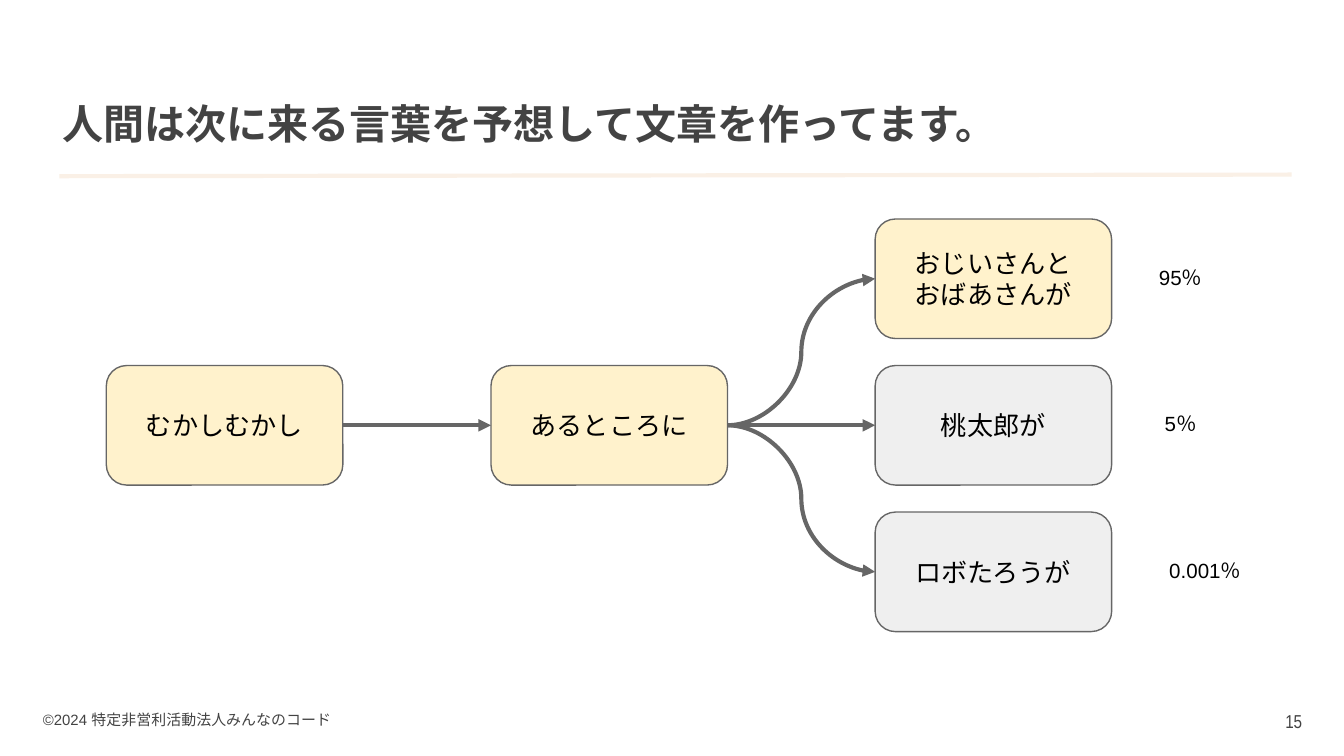
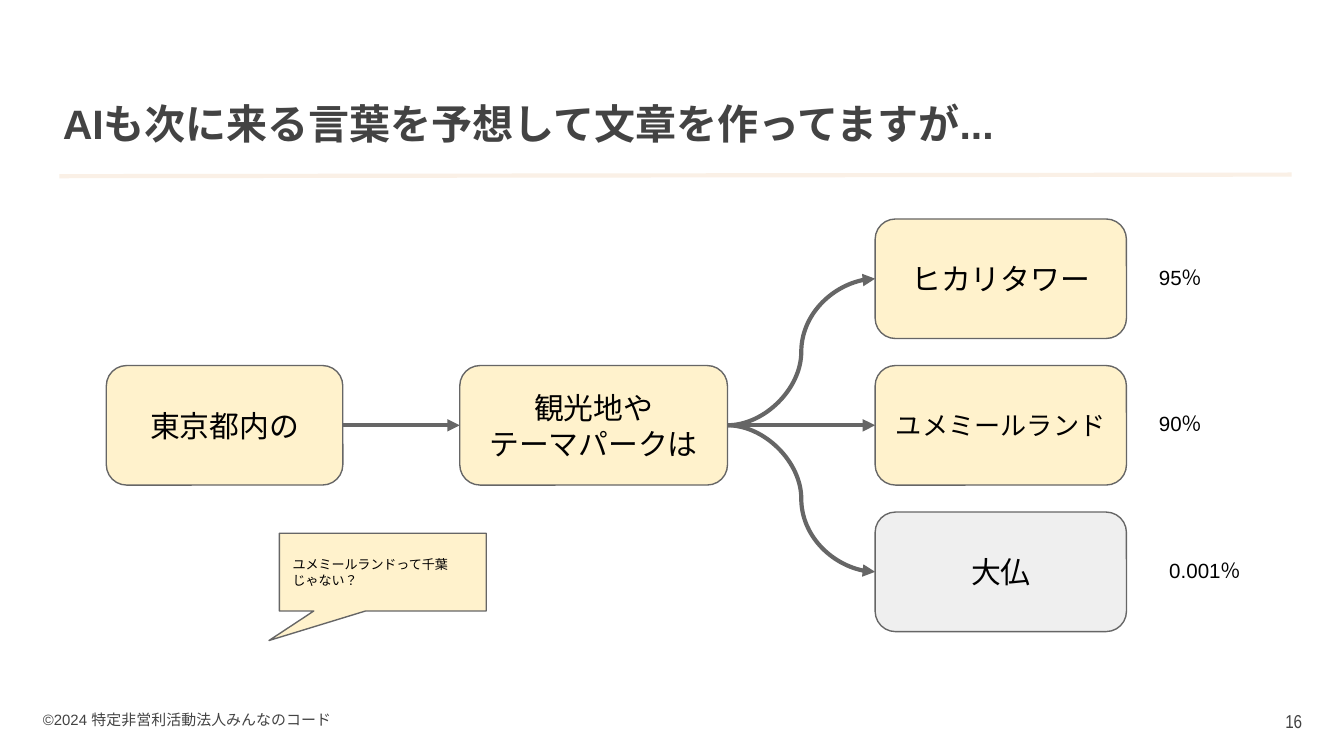
from dataclasses import dataclass

from lxml import etree
from pptx import Presentation
from pptx.dml.color import RGBColor
from pptx.enum.lang import MSO_LANGUAGE_ID
from pptx.enum.shapes import MSO_CONNECTOR, MSO_SHAPE
from pptx.enum.text import MSO_ANCHOR, MSO_AUTO_SIZE, PP_ALIGN
from pptx.oxml.ns import qn
from pptx.util import Cm, Pt

STRAIGHT, CURVE = MSO_CONNECTOR.STRAIGHT, MSO_CONNECTOR.CURVE
ROUNDED, CALLOUT = MSO_SHAPE.ROUNDED_RECTANGLE, MSO_SHAPE.ROUNDED_RECTANGULAR_CALLOUT
LEFT, CENTER, RIGHT = PP_ALIGN.LEFT, PP_ALIGN.CENTER, PP_ALIGN.RIGHT
TOP, MIDDLE = MSO_ANCHOR.TOP, MSO_ANCHOR.MIDDLE
JAPANESE = MSO_LANGUAGE_ID.JAPANESE
LEFT_SIDE, RIGHT_SIDE = 1, 3


@dataclass(frozen=True)
class Theme:
    font: str = "Arial"
    number_font: str = "Arial Narrow"
    dark: str = "434343"
    black: str = "000000"
    outline: str = "666666"
    rule: str = "FAF0E6"
    likely: str = "FFF2CC"
    unlikely: str = "EFEFEF"
    title_size: int = 22
    large_size: int = 16
    word_size: int = 14
    percent_size: int = 11
    number_size: int = 10
    footer_size: int = 8
    callout_size: int = 7
    thin: float = 0.75
    thick: float = 2.25


THEME = Theme()
FOOTER = "©2024 特定非営利活動法人みんなのコード"

# Flow diagram grid, in centimetres
BOX_WIDTH, BOX_HEIGHT = 4.47, 2.26
FIRST_LEFT, SECOND_RIGHT, BRANCH_LEFT = 2.01, 13.75, 16.54
BRANCH_TOP, ROW_PITCH = 4.14, 2.77
MIDDLE_TOP = BRANCH_TOP + ROW_PITCH
PERCENT_HEIGHT = 1.0
PERCENT_COLUMNS = [(21.56, 1.51), (21.56, 1.51), (21.77, 2.02)]


class Deck:
    def __init__(self, theme):
        self.theme = theme
        self.presentation = Presentation()
        self.presentation.slide_width = Cm(25.4)
        self.presentation.slide_height = Cm(14.29)
        self.slide = None

    def add_slide(self, title, number):
        """Start a slide with the shared title, rule and footer."""
        theme = self.theme
        self.slide = self.presentation.slides.add_slide(self.presentation.slide_layouts[6])
        self.text(number, 23.37, 13.08, 1.52, 1.09, theme.number_size, theme.dark,
                  RIGHT, MIDDLE, inset=0.28, font=theme.number_font)
        self.text(FOOTER, 0.58, 13.26, 6.15, 0.58, theme.footer_size, theme.dark,
                  inset=0.23)
        rule = self.slide.shapes.add_connector(
            STRAIGHT, Cm(1.12), Cm(3.33), Cm(24.41), Cm(3.3))
        self.style_line(rule, theme.rule)
        self.text(title, 0.91, 1.37, 23.62, 1.93, theme.title_size, theme.dark,
                  anchor=MIDDLE, inset=0.28, bold=True)

    def fill_text(self, shape, text, size, color, align, anchor, inset, font, bold):
        frame = shape.text_frame
        frame.word_wrap = True
        frame.vertical_anchor = anchor
        frame.margin_left = frame.margin_right = Cm(inset)
        frame.margin_top = frame.margin_bottom = Cm(inset)
        for index, line in enumerate(text.split("\n")):
            paragraph = frame.add_paragraph() if index else frame.paragraphs[0]
            paragraph.alignment = align
            run = paragraph.add_run()
            run.text = line
            run.font.size = Pt(size)
            run.font.bold = bold
            run.font.color.rgb = RGBColor.from_string(color)
            run.font.name = font
            run.font.language_id = JAPANESE
            etree.SubElement(run._r.get_or_add_rPr(), qn("a:ea"), typeface=font)

    def text(self, text, left, top, width, height, size, color, align=LEFT,
             anchor=TOP, inset=0.25, font=None, bold=False):
        box = self.slide.shapes.add_textbox(Cm(left), Cm(top), Cm(width), Cm(height))
        self.fill_text(box, text, size, color, align, anchor, inset,
                       font or self.theme.font, bold)
        return box

    def shape(self, kind, text, left, top, width, height, fill, size,
              adjustments, align=CENTER):
        shape = self.slide.shapes.add_shape(
            kind, Cm(left), Cm(top), Cm(width), Cm(height))
        for index, value in enumerate(adjustments):
            shape.adjustments[index] = value
        shape.shadow.inherit = False
        shape.fill.solid()
        shape.fill.fore_color.rgb = RGBColor.from_string(fill)
        shape.line.color.rgb = RGBColor.from_string(self.theme.outline)
        shape.line.width = Pt(self.theme.thin)
        self.fill_text(shape, text, size, self.theme.black, align, MIDDLE, 0.25,
                       self.theme.font, False)
        return shape

    def word(self, text, left, top, width, size, fill):
        return self.shape(ROUNDED, text, left, top, width, BOX_HEIGHT, fill, size, [0.17])

    def percent(self, text, row):
        left, width = PERCENT_COLUMNS[row]
        top = BRANCH_TOP + row * ROW_PITCH + (BOX_HEIGHT - PERCENT_HEIGHT) / 2
        box = self.text(text, left, top, width, PERCENT_HEIGHT,
                        self.theme.percent_size, self.theme.black, CENTER)
        box.text_frame.auto_size = MSO_AUTO_SIZE.SHAPE_TO_FIT_TEXT

    def style_line(self, connector, color):
        connector.line.color.rgb = RGBColor.from_string(color)
        connector.line.width = Pt(self.theme.thick)
        etree.SubElement(connector._element.spPr, qn("a:effectLst"))

    def arrow(self, kind, source, target):
        """Join the right side of one box to the left side of another."""
        connector = self.slide.shapes.add_connector(
            kind, source.left + source.width, source.top + source.height // 2,
            target.left, target.top + target.height // 2)
        connector.begin_connect(source, RIGHT_SIDE)
        connector.end_connect(target, LEFT_SIDE)
        self.style_line(connector, self.theme.outline)
        etree.SubElement(connector.line._get_or_add_ln(), qn("a:tailEnd"), type="triangle")

    def flow(self, first, second, branches, size, second_width, branch_width):
        """Two words in a row, then three possible next words with their odds."""
        likely = self.theme.likely
        start = self.word(first, FIRST_LEFT, MIDDLE_TOP, BOX_WIDTH, size, likely)
        middle = self.word(second, SECOND_RIGHT - second_width, MIDDLE_TOP,
                           second_width, size, likely)
        self.arrow(STRAIGHT, start, middle)
        for row, (text, odds, fill, text_size) in enumerate(branches):
            target = self.word(text, BRANCH_LEFT, BRANCH_TOP + row * ROW_PITCH,
                               branch_width, text_size, fill)
            self.arrow(CURVE, middle, target)
            self.percent(odds, row)


def main():
    deck = Deck(THEME)
    likely, unlikely = THEME.likely, THEME.unlikely
    word_size, large_size = THEME.word_size, THEME.large_size

    # How people continue a sentence
    deck.add_slide("人間は次に来る言葉を予想して文章を作ってます。", "15")
    deck.flow("むかしむかし", "あるところに", [
        ("おじいさんと\nおばあさんが", "95％", likely, word_size),
        ("桃太郎が", "5％", unlikely, word_size),
        ("ロボたろうが", "0.001％", unlikely, word_size),
    ], word_size, BOX_WIDTH, BOX_WIDTH)

    # How AI continues a sentence
    deck.add_slide("AIも次に来る言葉を予想して文章を作ってますが...", "16")
    deck.flow("東京都内の", "観光地や\nテーマパークは", [
        ("ヒカリタワー", "95％", likely, large_size),
        ("ユメミールランド", "90％", likely, word_size),
        ("大仏", "0.001％", unlikely, large_size),
    ], large_size, 5.06, 4.75)
    deck.shape(CALLOUT, "ユメミールランドって千葉じゃない？", 5.28, 10.08, 3.91, 1.47,
               likely, THEME.callout_size, [-0.55, 0.88, 0], LEFT)

    deck.presentation.save("out.pptx")


if __name__ == "__main__":
    main()
